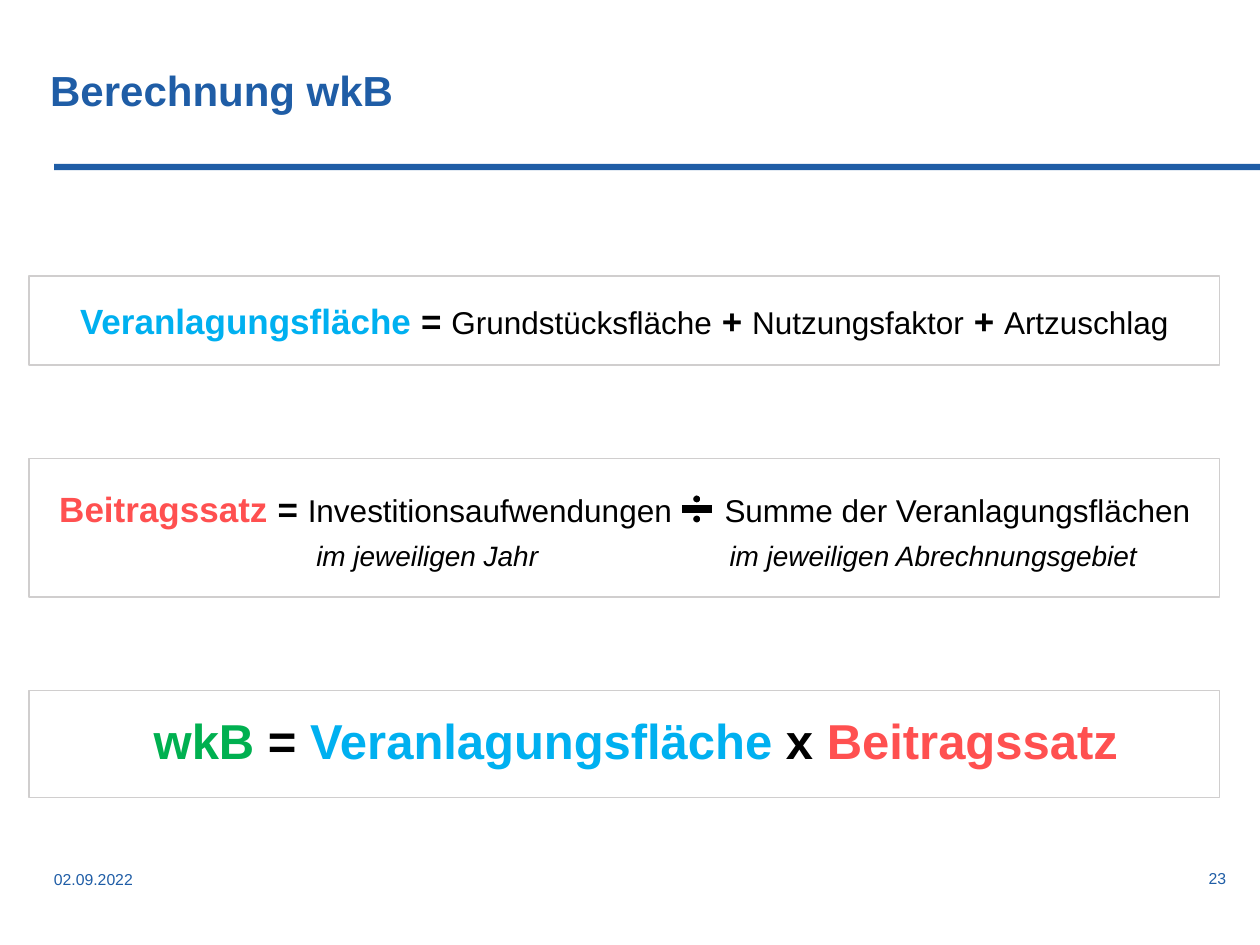
from lxml import etree
from pptx import Presentation
from pptx.dml.color import RGBColor
from pptx.enum.shapes import MSO_SHAPE
from pptx.enum.text import MSO_ANCHOR, PP_ALIGN
from pptx.oxml.ns import qn
from pptx.util import Inches, Pt

RECTANGLE, DIVIDE = MSO_SHAPE.RECTANGLE, MSO_SHAPE.MATH_DIVIDE
TOP, MIDDLE = MSO_ANCHOR.TOP, MSO_ANCHOR.MIDDLE
LEFT, CENTER, RIGHT = PP_ALIGN.LEFT, PP_ALIGN.CENTER, PP_ALIGN.RIGHT
COLORS = {
    "brand": "1F5DA6", "area": "00B0F0", "rate": "FF5050", "result": "00B050",
    "text": "000000", "border": "D0CECE", "white": "FFFFFF",
}


def add_runs(paragraph, runs):
    """Each run is (text, size, color name, style letters b and i)."""
    for text, size, color, style in runs:
        run = paragraph.add_run()
        run.text = text
        run.font.name = "Arial"
        run.font.size = Pt(size)
        run.font.color.rgb = RGBColor.from_string(COLORS[color])
        run.font.bold = "b" in style
        run.font.italic = "i" in style


def add_shape(kind, left, top, width, height, fill=None, line=None):
    shape = slide.shapes.add_shape(
        kind, Inches(left), Inches(top), Inches(width), Inches(height))
    shape.shadow.inherit = False
    if fill:
        shape.fill.solid()
        shape.fill.fore_color.rgb = RGBColor.from_string(COLORS[fill])
    else:
        shape.fill.background()
    if line:
        shape.line.color.rgb = RGBColor.from_string(COLORS[line])
        shape.line.width = Pt(1)
    else:
        shape.line.fill.background()
    return shape


presentation = Presentation()
presentation.slide_width, presentation.slide_height = Inches(10), Inches(7.5)
slide = presentation.slides.add_slide(presentation.slide_layouts[6])

# Rule below the title
add_shape(RECTANGLE, 0.43, 1.3, 9.57, 0.05, fill="brand")

# Title, date and slide number
labels = [
    ("Berechnung wkB", 0.3, 0.51, 7.06, 0.56, 24, "b", LEFT, TOP),
    ("02.09.2022", 0.33, 6.78, 2.25, 0.4, 9, "", LEFT, MIDDLE),
    ("23", 7.58, 6.77, 2.25, 0.4, 9, "", RIGHT, MIDDLE),
]
for text, left, top, width, height, size, style, alignment, anchor in labels:
    label = slide.shapes.add_textbox(
        Inches(left), Inches(top), Inches(width), Inches(height))
    frame = label.text_frame
    frame.word_wrap = True
    frame.vertical_anchor = anchor
    paragraph = frame.paragraphs[0]
    paragraph.alignment = alignment
    paragraph.line_spacing = 0.9 if anchor == TOP else 1.0
    add_runs(paragraph, [(text, size, "brand", style)])

# Formula boxes: top, height, left inset, alignment, line spacing,
# then the lines as (tab stops, runs)
formulas = [
    (2.19, 0.71, 0.1, CENTER, 1.0, [
        ([], [("Veranlagungsfläche ", 20, "area", "b"),
              ("= ", 20, "text", "b"),
              ("Grundstücksfläche", 18, "text", ""),
              (" + ", 20, "text", "b"),
              ("Nutzungsfaktor", 18, "text", ""),
              (" + ", 20, "text", "b"),
              ("Artzuschlag", 18, "text", "")]),
    ]),
    (3.64, 1.1, 0.24, LEFT, 1.1, [
        ([5.28], [("Beitragssatz ", 20, "rate", "b"),
                  ("= ", 20, "text", "b"),
                  ("Investitionsaufwendungen\tSumme der Veranlagungsflächen",
                   18, "text", "")]),
        ([2.04, 5.32], [("\tim jeweiligen Jahr\tim jeweiligen Abrechnungsgebiet",
                         16, "text", "i")]),
    ]),
    (5.48, 0.85, 0.28, CENTER, 0.9, [
        ([], [("wkB ", 28, "result", "b"),
              ("= ", 28, "text", "b"),
              ("Veranlagungsfläche", 28, "area", "b"),
              (" x ", 28, "text", "b"),
              ("Beitragssatz", 28, "rate", "b")]),
    ]),
]
for top, height, inset, alignment, spacing, lines in formulas:
    box = add_shape(RECTANGLE, 0.23, top, 9.45, height, line="border")
    frame = box.text_frame
    frame.word_wrap = True
    frame.vertical_anchor = MIDDLE
    frame.margin_left = Inches(inset)
    for index, (tab_stops, runs) in enumerate(lines):
        paragraph = frame.add_paragraph() if index else frame.paragraphs[0]
        paragraph.alignment = alignment
        paragraph.line_spacing = spacing
        if index:
            paragraph.space_before = Pt(3.5)
        if tab_stops:
            properties = paragraph._p.get_or_add_pPr()
            tab_list = etree.SubElement(properties, qn("a:tabLst"))
            for stop in tab_stops:
                etree.SubElement(tab_list, qn("a:tab"),
                                 pos=str(Inches(stop)), algn="l")
        add_runs(paragraph, runs)

# Division sign in the contribution rate formula
add_shape(DIVIDE, 5.36, 3.89, 0.34, 0.3, fill="text", line="white")

presentation.save("out.pptx")
